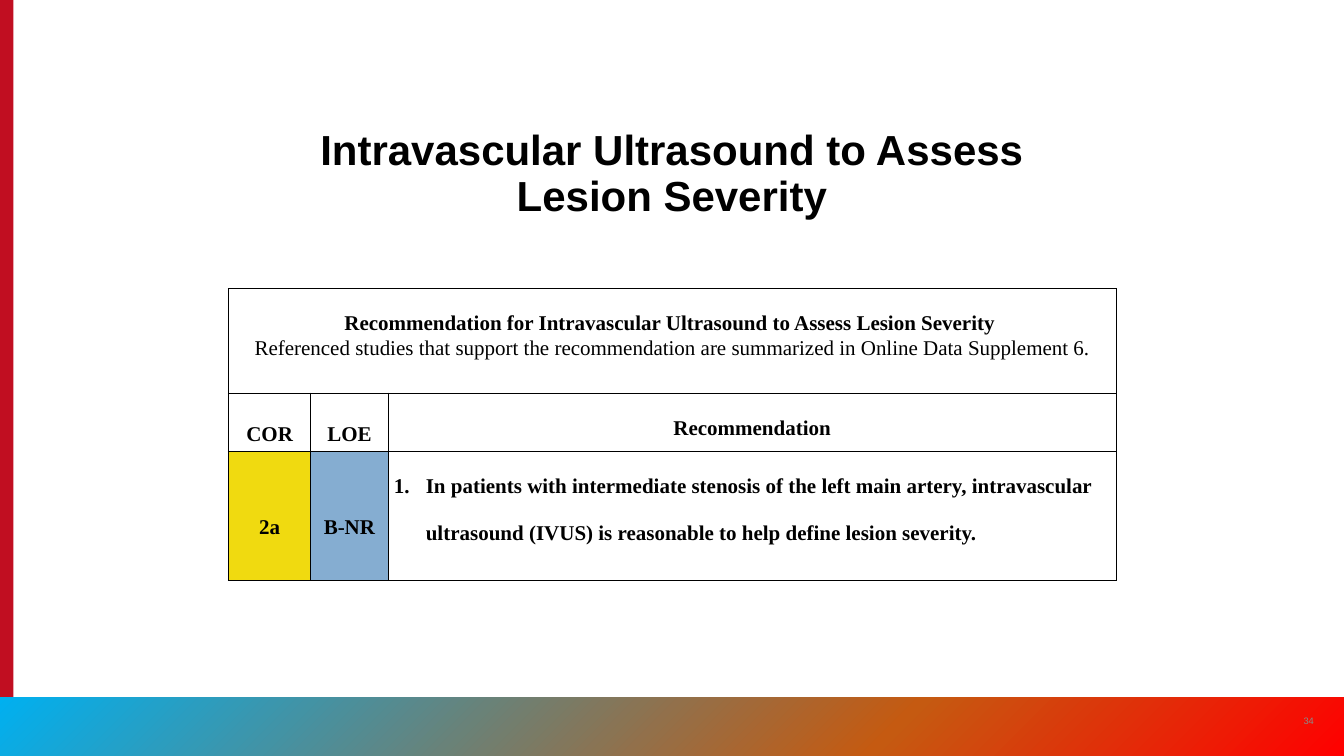
from dataclasses import dataclass
from typing import Any, Optional

from lxml import etree
from pptx import Presentation
from pptx.dml.color import RGBColor
from pptx.enum.shapes import MSO_SHAPE
from pptx.enum.text import MSO_ANCHOR, PP_ALIGN
from pptx.oxml.ns import qn
from pptx.util import Inches, Pt

RECTANGLE = MSO_SHAPE.RECTANGLE
TOP, MIDDLE, BOTTOM = MSO_ANCHOR.TOP, MSO_ANCHOR.MIDDLE, MSO_ANCHOR.BOTTOM
LEFT, CENTER = PP_ALIGN.LEFT, PP_ALIGN.CENTER

BLACK = RGBColor(0x00, 0x00, 0x00)
GRAY = RGBColor(0x8A, 0x8B, 0x8A)
RED = RGBColor(0xC1, 0x0E, 0x21)
YELLOW = RGBColor(0xF0, 0xDA, 0x10)
BLUE = RGBColor(0x85, 0xAD, 0xD1)
BAND_STOPS = (
    (0, RGBColor(0x00, 0xB0, 0xF0)),
    (66, RGBColor(0xC5, 0x5A, 0x11)),
    (100, RGBColor(0xFF, 0x00, 0x00)),
)

COLUMN_WIDTHS = (0.98, 0.92, 8.67)
ROW_HEIGHTS = (1.24, 0.7, 1.53)


@dataclass
class Line:
    text: str
    size: float = 18
    font: str = "Times New Roman"
    bold: bool = True
    color: RGBColor = BLACK
    align: Any = CENTER
    spacing: float = 2.0
    numbered: bool = False


@dataclass
class TextBox:
    box: tuple[float, float, float, float]
    anchor: Any
    line: Line


@dataclass
class Cell:
    row: int
    column: int
    lines: list[Line]
    anchor: Any = MIDDLE
    fill: Optional[RGBColor] = None


TEXT_BOXES = [
    TextBox((3, 1.5, 10, 1.17), BOTTOM,
            Line("Intravascular Ultrasound to Assess Lesion Severity",
                 36, "Arial", spacing=0.9)),
    TextBox((15.34, 8.34, 0.48, 0.48), MIDDLE,
            Line("34", 8, "Arial", False, GRAY, spacing=1.0)),
]

CELLS = [
    Cell(0, 0, [
        Line("Recommendation for Intravascular Ultrasound to Assess Lesion Severity "),
        Line("Referenced studies that support the recommendation are summarized "
             "in Online Data Supplement 6.", bold=False, spacing=1.07),
    ], TOP),
    Cell(1, 0, [Line("COR")]),
    Cell(1, 1, [Line("LOE")]),
    Cell(1, 2, [Line("Recommendation")], TOP),
    Cell(2, 0, [Line("2a")], fill=YELLOW),
    Cell(2, 1, [Line("B-NR")], fill=BLUE),
    Cell(2, 2, [Line("In patients with intermediate stenosis of the left main artery, "
                     "intravascular ultrasound (IVUS) is reasonable to help define "
                     "lesion severity.", align=LEFT, numbered=True)], TOP),
]


def set_values(target: Any, values: dict[str, Any]) -> None:
    for name, value in values.items():
        setattr(target, name, value)


def add_color(parent: Any, color: RGBColor) -> None:
    etree.SubElement(parent, qn("a:srgbClr"), val=str(color))


def add_number(paragraph: Any) -> None:
    properties = paragraph._p.get_or_add_pPr()
    set_indent = {"marL": Inches(0.38), "indent": -Inches(0.38)}
    for name, value in set_indent.items():
        properties.set(name, str(int(value)))
    add_color(etree.SubElement(properties, qn("a:buClr")), BLACK)
    etree.SubElement(properties, qn("a:buAutoNum"), type="arabicPeriod")


def write_lines(frame: Any, lines: list[Line]) -> None:
    for index, line in enumerate(lines):
        paragraph = frame.add_paragraph() if index else frame.paragraphs[0]
        set_values(paragraph, {"alignment": line.align, "line_spacing": line.spacing})
        if line.numbered:
            add_number(paragraph)
        run = paragraph.add_run()
        run.text = line.text
        set_values(run.font, {"name": line.font, "size": Pt(line.size), "bold": line.bold})
        run.font.color.rgb = line.color


def add_rectangle(slide: Any, box: tuple[float, float, float, float]) -> Any:
    shape = slide.shapes.add_shape(RECTANGLE, *map(Inches, box))
    shape.shadow.inherit = False
    shape.line.fill.background()
    return shape


def add_gradient(shape: Any) -> None:
    shape.fill.gradient()
    shape.fill.gradient_angle = 315
    stops = shape._element.spPr.find(qn("a:gradFill")).find(qn("a:gsLst"))
    for stop in list(stops):
        stops.remove(stop)
    for percent, color in BAND_STOPS:
        add_color(etree.SubElement(stops, qn("a:gs"), pos=str(percent * 1000)), color)


def add_text_box(slide: Any, item: TextBox) -> None:
    frame = slide.shapes.add_textbox(*map(Inches, item.box)).text_frame
    set_values(frame, {"word_wrap": True, "vertical_anchor": item.anchor})
    write_lines(frame, [item.line])


def add_borders(cell: Any) -> None:
    properties = cell._tc.get_or_add_tcPr()
    for index, side in enumerate(("a:lnL", "a:lnR", "a:lnT", "a:lnB")):
        border = etree.Element(qn(side), w=str(int(Pt(1))))
        add_color(etree.SubElement(border, qn("a:solidFill")), BLACK)
        properties.insert(index, border)


def add_recommendation_table(slide: Any) -> None:
    table = slide.shapes.add_table(
        len(ROW_HEIGHTS), len(COLUMN_WIDTHS), Inches(2.72), Inches(3.44),
        Inches(sum(COLUMN_WIDTHS)), Inches(sum(ROW_HEIGHTS))).table
    set_values(table, {"first_row": False, "horz_banding": False})
    for column, width in zip(table.columns, COLUMN_WIDTHS):
        column.width = Inches(width)
    for row, height in zip(table.rows, ROW_HEIGHTS):
        row.height = Inches(height)
    table.cell(0, 0).merge(table.cell(0, 2))
    for cell in table.iter_cells():
        cell.fill.background()
        add_borders(cell)
    for item in CELLS:
        cell = table.cell(item.row, item.column)
        set_values(cell, {
            "vertical_anchor": item.anchor,
            "margin_left": Inches(0.07), "margin_right": Inches(0.07),
            "margin_top": 0, "margin_bottom": 0,
        })
        if item.fill is not None:
            cell.fill.solid()
            cell.fill.fore_color.rgb = item.fill
        write_lines(cell.text_frame, item.lines)


def main() -> None:
    presentation = Presentation()
    set_values(presentation, {"slide_width": Inches(16), "slide_height": Inches(9)})
    slide = presentation.slides.add_slide(presentation.slide_layouts[6])

    # Side stripe and bottom band
    stripe = add_rectangle(slide, (0, 0, 0.16, 9))
    stripe.fill.solid()
    stripe.fill.fore_color.rgb = RED
    add_gradient(add_rectangle(slide, (0, 8.3, 16, 0.7)))

    # Title and page number
    for item in TEXT_BOXES:
        add_text_box(slide, item)

    # Recommendation table
    add_recommendation_table(slide)

    presentation.save("out.pptx")


if __name__ == "__main__":
    main()
